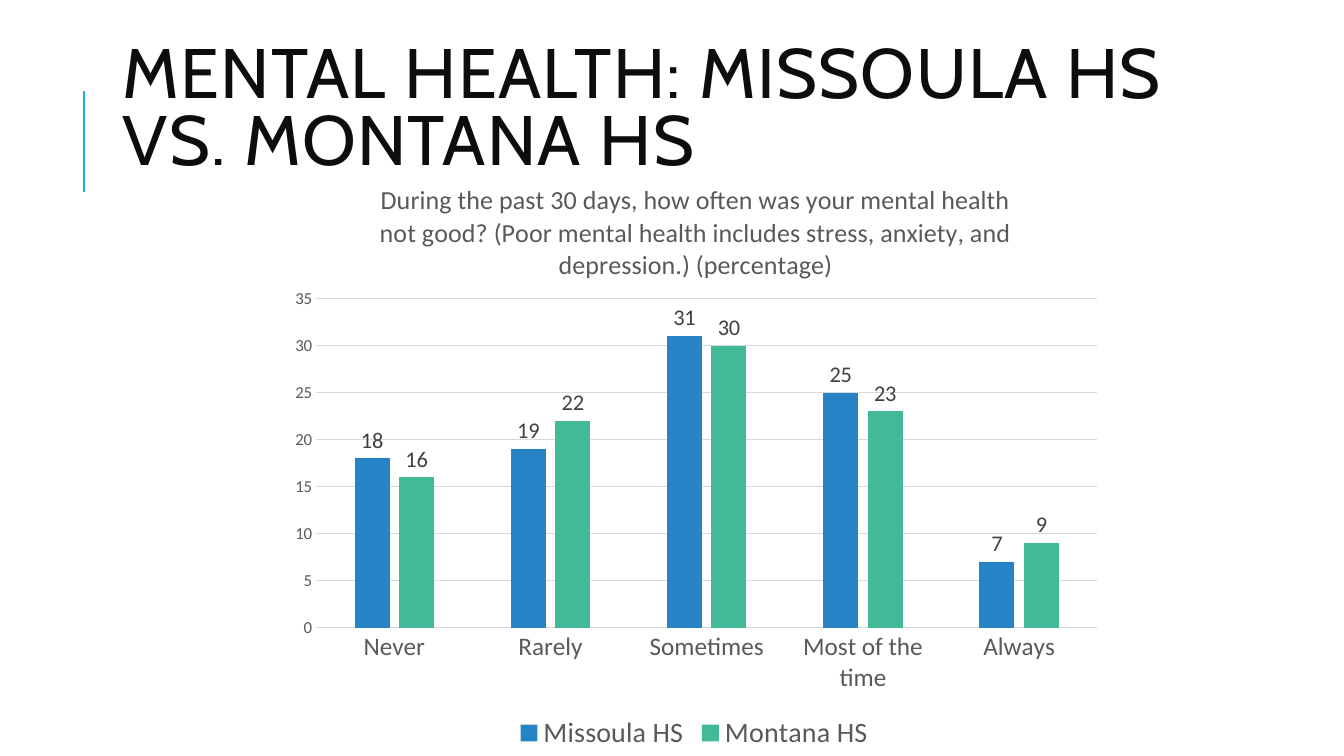
from lxml import etree
from pptx import Presentation
from pptx.chart.data import CategoryChartData
from pptx.dml.color import RGBColor
from pptx.enum.chart import XL_CHART_TYPE, XL_LABEL_POSITION, XL_LEGEND_POSITION, XL_TICK_MARK
from pptx.enum.shapes import MSO_CONNECTOR
from pptx.enum.text import MSO_ANCHOR
from pptx.oxml import parse_xml
from pptx.oxml.ns import nsdecls, qn
from pptx.util import Inches, Pt

ACCENT = RGBColor(0x1C, 0xAD, 0xE4)
HEADING = RGBColor(0x0D, 0x0D, 0x0D)
AXIS_TEXT = RGBColor(0x59, 0x59, 0x59)
LABEL_TEXT = RGBColor(0x40, 0x40, 0x40)
GRID = RGBColor(0xD9, 0xD9, 0xD9)
BLUE = RGBColor(0x26, 0x83, 0xC6)
GREEN = RGBColor(0x42, 0xBA, 0x97)

HEADING_BOX = [Inches(n) for n in (1.12, 0.29, 10.63, 1.64)]
CHART_BOX = [Inches(n) for n in (2.72, 1.45, 8.33, 6.05)]
QUESTION = ("During the past 30 days, how often was your mental health not good? "
            "(Poor mental health includes stress, anxiety, and depression.) (percentage)")
ANSWERS = ["Never", "Rarely", "Sometimes", "Most of the time", "Always"]
SCHOOLS = [("Missoula HS", [18, 19, 31, 25, 7], BLUE),
           ("Montana HS", [16, 22, 30, 23, 9], GREEN)]


def set_font(font, size, color, name="Calibri"):
    font.name, font.size, font.bold = name, Pt(size), False
    font.color.rgb = color


def set_line(line, color):
    line.color.rgb = color
    line.width = Pt(0.75)


def set_layout(parent, **shares):
    """Place a chart part by shares of the chart's size."""
    for old in parent.findall(qn("c:layout")):
        parent.remove(old)
    layout = parse_xml(f"<c:layout {nsdecls('c')}><c:manualLayout/></c:layout>")
    manual = layout[0]
    if "w" in shares:
        etree.SubElement(manual, qn("c:layoutTarget")).set("val", "inner")
    for side in ("x", "y"):
        etree.SubElement(manual, qn(f"c:{side}Mode")).set("val", "edge")
    for side, share in shares.items():
        etree.SubElement(manual, qn(f"c:{side}")).set("val", str(share))
    text = parent.find(qn("c:tx"))
    parent.insert(0 if text is None else 1, layout)


def add_heading(slide, left, top, width, height):
    """Add the slide title with the accent rule at its left."""
    rule_x, rule_top = left - Inches(0.29), top + Inches(0.61)
    rule = slide.shapes.add_connector(
        MSO_CONNECTOR.STRAIGHT, rule_x, rule_top + Inches(1), rule_x, rule_top)
    rule.line.color.rgb = ACCENT
    rule.line.width = Pt(1.5)
    etree.SubElement(rule._element.spPr, qn("a:effectLst"))

    frame = slide.shapes.add_textbox(left, top, width, height).text_frame
    frame.word_wrap = True
    frame.vertical_anchor = MSO_ANCHOR.MIDDLE
    para = frame.paragraphs[0]
    para.line_spacing = 0.8
    span = para.add_run()
    span.text = "MENTAL HEALTH: MISSOULA HS VS. MONTANA HS"
    set_font(span.font, 50, HEADING, "Cabin")
    span.font._element.set("spc", "100")


def style_axes(chart):
    for axis, size in ((chart.category_axis, 18), (chart.value_axis, 12)):
        axis.major_tick_mark = axis.minor_tick_mark = XL_TICK_MARK.NONE
        set_font(axis.tick_labels.font, size, AXIS_TEXT)
    set_line(chart.category_axis.format.line, GRID)
    values = chart.value_axis
    values.minimum_scale, values.maximum_scale, values.major_unit = 0, 35, 5
    values.format.line.fill.background()
    set_line(values.major_gridlines.format.line, GRID)


def style_columns(plot):
    plot.gap_width, plot.overlap, plot.vary_by_categories = 219, -27, False
    for series, (_, _, color) in zip(plot.series, SCHOOLS):
        series.format.fill.solid()
        series.format.fill.fore_color.rgb = color
        labels = series.data_labels
        labels.show_value = True
        labels.position = XL_LABEL_POSITION.OUTSIDE_END
        set_font(labels.font, 16, LABEL_TEXT)


def add_survey_chart(slide, left, top, width, height):
    data = CategoryChartData()
    data.categories = ANSWERS
    for name, values, _ in SCHOOLS:
        data.add_series(name, values)
    chart = slide.shapes.add_chart(
        XL_CHART_TYPE.COLUMN_CLUSTERED, left, top, width, height, data).chart
    set_font(chart.font, 10, RGBColor(0, 0, 0))

    title = chart.chart_title
    title.text_frame.text = QUESTION
    set_font(title.text_frame.paragraphs[0].font, 18.6, AXIS_TEXT)
    title.include_in_layout = False
    set_layout(title._element, x=0.12, y=0.05)

    chart.has_legend = True
    chart.legend.position = XL_LEGEND_POSITION.BOTTOM
    chart.legend.include_in_layout = False
    set_font(chart.legend.font, 20, AXIS_TEXT)

    style_axes(chart)
    style_columns(chart.plots[0])
    plot_area = chart._chartSpace.chart.plotArea
    set_layout(plot_area, x=0.05, y=0.25, w=0.93, h=0.54)


def main():
    deck = Presentation()
    deck.slide_width, deck.slide_height = Inches(13.33), Inches(7.5)
    page = deck.slides.add_slide(deck.slide_layouts[6])
    add_heading(page, *HEADING_BOX)
    add_survey_chart(page, *CHART_BOX)
    deck.save("out.pptx")


if __name__ == "__main__":
    main()
